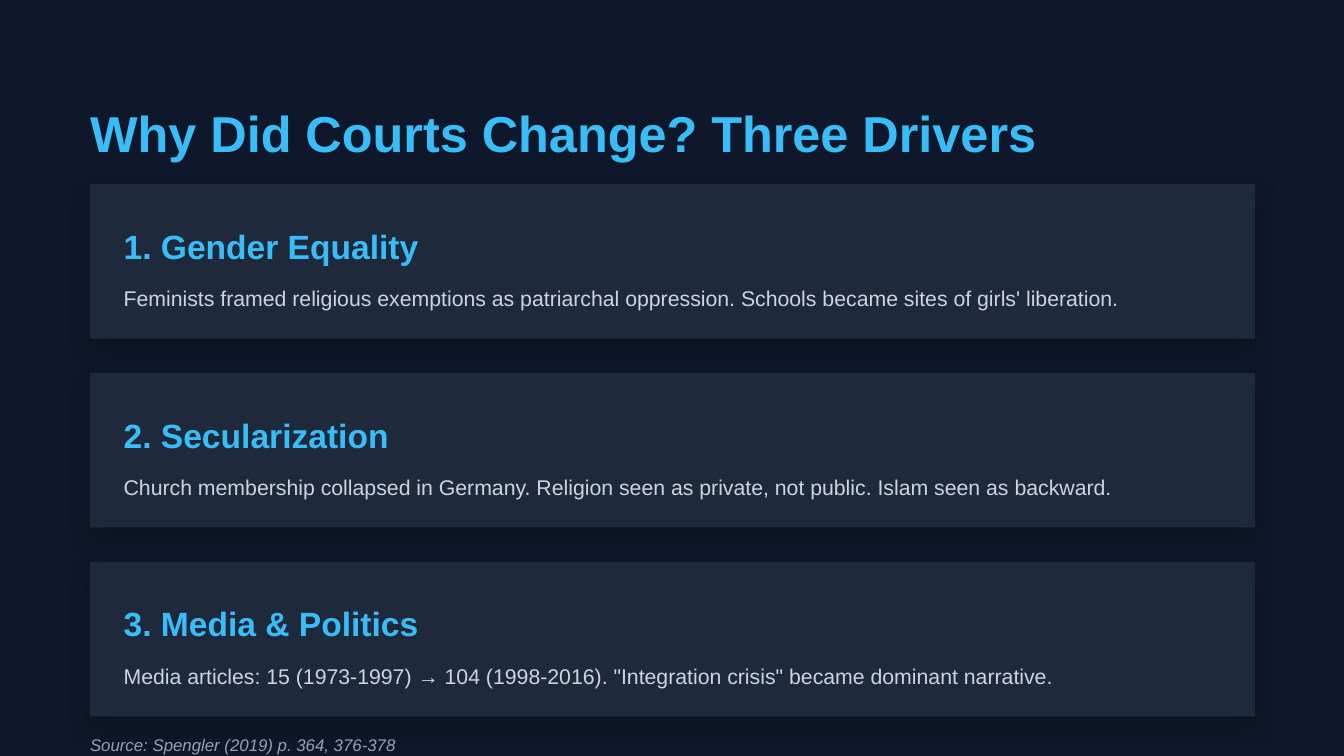
import pptx
import pptx.util
import pptx.dml.color
import pptx.enum.shapes
import pptx.enum.text
import lxml.etree
from pptx.util import Inches, Pt
from pptx.dml.color import RGBColor

# Content
TITLE = "Why Did Courts Change? Three Drivers"
DRIVERS = [
    ("1. Gender Equality",
     "Feminists framed religious exemptions as patriarchal oppression. "
     "Schools became sites of girls' liberation."),
    ("2. Secularization",
     "Church membership collapsed in Germany. Religion seen as private, "
     "not public. Islam seen as backward."),
    ("3. Media & Politics",
     "Media articles: 15 (1973-1997) → 104 (1998-2016). "
     "\"Integration crisis\" became dominant narrative."),
]
SOURCE = "Source: Spengler (2019) p. 364, 376-378"

# Colours and layout, in inches
NAVY = RGBColor(0x0F, 0x17, 0x2A)
CARD = RGBColor(0x1E, 0x29, 0x3B)
SKY = RGBColor(0x38, 0xBD, 0xF8)
LIGHT = RGBColor(0xCB, 0xD5, 0xE1)
MUTED = RGBColor(0x94, 0xA3, 0xB8)
LEFT, CARD_WIDTH, CARD_HEIGHT = 0.67, 8.67, 1.15
FIRST_TOP, LAST_TOP = 1.37, 4.18
CARD_STEP = (LAST_TOP - FIRST_TOP) / (len(DRIVERS) - 1)
PADDING = 0.25

DRAWING_NS = "http://schemas.openxmlformats.org/drawingml/2006/main"


def write(box, text, size, color, spacing, bold=False, italic=False):
    frame = box.text_frame
    frame.text = text
    frame.word_wrap = True
    frame.auto_size = pptx.enum.text.MSO_AUTO_SIZE.NONE
    frame.vertical_anchor = pptx.enum.text.MSO_ANCHOR.TOP
    frame.margin_left = frame.margin_right = 0
    frame.margin_top = frame.margin_bottom = 0
    paragraph = frame.paragraphs[0]
    paragraph.alignment = pptx.enum.text.PP_ALIGN.LEFT
    paragraph.line_spacing = spacing
    font = paragraph.font
    font.name, font.size = "Arial", Pt(size)
    font.bold, font.italic = bold, italic
    font.color.rgb = color


def add_text(slide, left, top, width, height, *style, **emphasis):
    box = slide.shapes.add_textbox(
        Inches(left), Inches(top), Inches(width), Inches(height))
    write(box, *style, **emphasis)


def add_card(slide, top):
    card = slide.shapes.add_shape(
        pptx.enum.shapes.MSO_SHAPE.RECTANGLE, Inches(LEFT), Inches(top),
        Inches(CARD_WIDTH), Inches(CARD_HEIGHT))
    card.fill.solid()
    card.fill.fore_color.rgb = CARD
    card.line.fill.background()
    # Soft shadow falling straight down
    card.shadow.inherit = False
    effects = card._element.spPr.find(f"{{{DRAWING_NS}}}effectLst")
    effects.append(lxml.etree.fromstring(
        f'<a:outerShdw xmlns:a="{DRAWING_NS}" blurRad="{Pt(12)}" '
        f'dist="{Pt(6)}" dir="5400000" algn="bl" rotWithShape="0">'
        '<a:srgbClr val="000000"><a:alpha val="20000"/></a:srgbClr>'
        '</a:outerShdw>'))


def main():
    # Widescreen 16:9 slide
    deck = pptx.Presentation()
    deck.slide_width = Inches(10)
    deck.slide_height = deck.slide_width * 9 // 16
    slide = deck.slides.add_slide(deck.slide_layouts.get_by_name("Title Only"))
    slide.background.fill.solid()
    slide.background.fill.fore_color.rgb = NAVY

    # Title
    title = slide.shapes.title
    title.left, title.top = Inches(LEFT), Inches(0.67)
    title.width, title.height = Inches(8.84), Inches(0.45)
    write(title, TITLE, 27, SKY, 1.2, bold=True)

    # Driver cards
    text_left = LEFT + PADDING
    for index, (heading, body) in enumerate(DRIVERS):
        top = FIRST_TOP + index * CARD_STEP
        add_card(slide, top)
        add_text(slide, text_left, top + PADDING, 8.33, 0.3,
                 heading, 18, SKY, 1.2, bold=True)
        add_text(slide, text_left, top + 0.68, 8.33, 0.22,
                 body, 11.4, LIGHT, 1.4)

    # Source line
    add_text(slide, LEFT, 5.41, 8.84, 0.17,
             SOURCE, 9, MUTED, 1.4, italic=True)

    deck.save("out.pptx")


if __name__ == "__main__":
    main()
